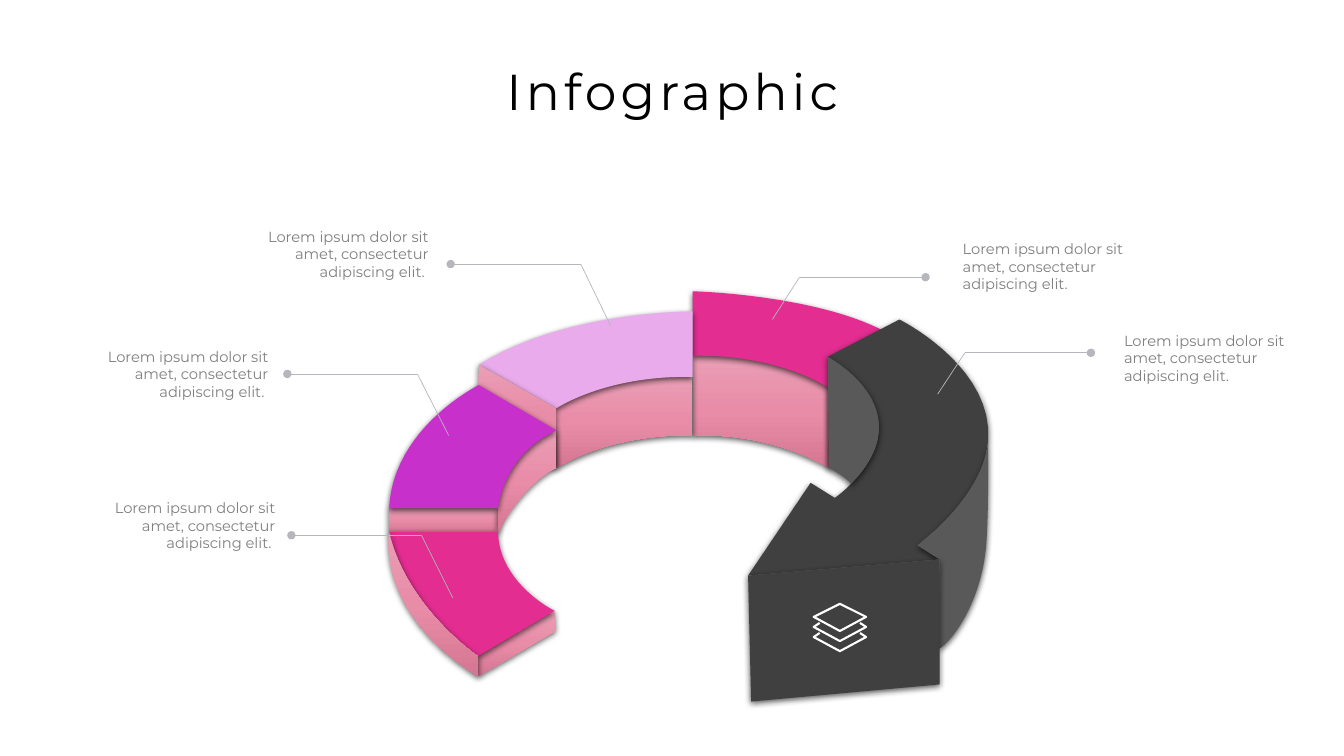
from copy import deepcopy
from dataclasses import dataclass

from pptx import Presentation
from pptx.dml.color import RGBColor
from pptx.enum.shapes import MSO_CONNECTOR, MSO_SHAPE
from pptx.enum.text import MSO_ANCHOR, PP_ALIGN
from pptx.oxml import parse_xml
from pptx.oxml.ns import nsdecls, qn
from pptx.util import Inches, Pt


@dataclass(frozen=True)
class Theme:
    """Colours and type sizes of the slide."""
    font: str = "Montserrat"
    title_size: float = 36
    note_size: float = 10.5
    title: str = "000000"
    note: str = "808080"
    leader: str = "B6B7BD"
    icon: str = "FFFFFF"
    wall: tuple = ("E99EB4", "E98CA8", "D57793")
    pink: str = "E32D91"
    lilac: str = "E9ABEB"
    violet: str = "C830CC"
    dark: str = "404040"
    grey: str = "595959"


THEME = Theme()
CURVE_STEPS = 24
NOTE = "Lorem ipsum dolor sit amet, consectetur adipiscing elit."

BACK_RIGHT = [
    (THEME.wall, [(6.87, 4.32), (6.87, 3.53), (7.65, 3.49, 8.22, 3.85),
                  (8.22, 4.64), (7.68, 4.29, 6.87, 4.32)]),
    (THEME.pink, [(6.87, 3.53), (6.87, 2.89), (8.04, 2.92, 8.74, 3.27),
                  (8.22, 3.85), (7.73, 3.51, 6.87, 3.53)]),
    (THEME.wall, [(8.75, 3.27), (8.22, 3.86), (8.22, 4.64), (8.74, 4.15)]),
]
ARROW = [
    (THEME.dark, [(8.21, 3.54), (8.92, 3.17), (10.78, 4.09, 9.1, 5.41),
                  (9.32, 5.55), (7.42, 5.71), (8.04, 4.79), (8.28, 4.94),
                  (9.31, 4.23, 8.21, 3.54)]),
    (THEME.grey, [(8.44, 4.8), (8.4, 4.74, 8.22, 4.64), (8.21, 3.54),
                  (9.18, 4.05, 8.44, 4.8)]),
    (THEME.grey, [(9.32, 5.55), (9.1, 5.41), (9.74, 4.94, 9.8, 4.39),
                  (9.81, 5.06, 9.78, 5.43),
                  (9.73, 5.95, 9.47, 6.34, 9.31, 6.44)]),
    (THEME.dark, [(7.42, 5.71), (9.32, 5.55), (9.32, 6.79), (7.45, 6.96)]),
]
BACK_LEFT = [
    (THEME.wall, [(5.52, 4.64), (5.51, 4.05), (6.01, 3.72, 6.87, 3.74),
                  (6.87, 4.32), (6.12, 4.28, 5.52, 4.64)]),
    (THEME.lilac, [(6.87, 3.74), (6.87, 3.09), (5.6, 3.08, 4.75, 3.62),
                   (5.52, 4.05), (6.01, 3.72, 6.87, 3.74)]),
    (THEME.wall, [(4.75, 3.62), (5.51, 4.05), (5.52, 4.64), (4.74, 4.2)]),
]
MIDDLE_LEFT = [
    (THEME.wall, [(4.94, 5.04), (4.97, 4.52, 5.52, 4.27), (5.52, 4.64),
                  (5.2, 4.77, 4.94, 5.28)]),
    (THEME.violet, [(5.52, 4.27), (4.75, 3.82), (3.9, 4.24, 3.86, 5.04),
                    (4.94, 5.04), (4.98, 4.52, 5.52, 4.27)]),
]
FRONT_LEFT = [
    (THEME.wall, [(4.74, 6.51), (4.74, 6.71), (5.51, 6.26), (5.5, 6.06)]),
    (THEME.pink, [(5.5, 6.06), (4.95, 5.79, 4.94, 5.28), (3.86, 5.28),
                  (3.95, 5.91, 4.74, 6.51)]),
    (THEME.wall, [(4.74, 6.71), (4.74, 6.51), (4.03, 6.03, 3.86, 5.28),
                  (3.71, 6.06, 4.74, 6.71)]),
]
STEP_EDGE = (3.86, 5.04, 1.09, 0.24)

LEFT_CALLOUTS = [
    ((4.45, 4.32), (4.14, 3.71), (2.85, 3.71), (0.92, 3.4)),
    ((4.49, 5.93), (4.18, 5.31), (2.89, 5.31), (0.99, 4.9)),
    ((6.06, 3.24), (5.76, 2.62), (4.47, 2.62), (2.51, 2.21)),
]
RIGHT_CALLOUTS = [
    ((9.3, 3.91), (9.57, 3.5), (10.82, 3.5), (11.05, 3.24)),
    ((7.66, 3.17), (7.93, 2.75), (9.18, 2.75), (9.45, 2.33)),
]


def rgb(value):
    """Turn a hex string into a colour."""
    return RGBColor.from_string(value)


def apply(target, values):
    """Set attributes from a dict of format values."""
    for key, value in values.items():
        setattr(target, key, value)


def trace(outline):
    """Turn corners and Bezier segments into points along the outline."""
    points = [outline[0]]
    for segment in outline[1:]:
        pen = points[-1]
        if len(segment) == 2:
            points.append(segment)
            continue
        first = segment[:-4] or pen
        second, end = segment[-4:-2], segment[-2:]
        for step in range(1, CURVE_STEPS + 1):
            t = step / CURVE_STEPS
            u = 1 - t
            points.append(tuple(
                u**3 * a + 3 * u * u * t * b + 3 * u * t * t * c + t**3 * d
                for a, b, c, d in zip(pen, first, second, end)))
    return points


def add_outline(slide, outline, close=True):
    """Draw a freeform through an outline given in inches."""
    start, *rest = [(Inches(x), Inches(y)) for x, y in trace(outline)]
    builder = slide.shapes.build_freeform(*start)
    builder.add_line_segments(rest, close=close)
    return builder.convert_to_shape()


def paint_face(face, paint):
    """Give a face its flat or graded fill and a soft shadow."""
    face.line.fill.background()
    face.shadow.inherit = False
    properties = face._element.spPr
    if isinstance(paint, str):
        face.fill.solid()
        face.fill.fore_color.rgb = rgb(paint)
    else:
        face.fill.gradient()
        face.fill.gradient_angle = 270
        stops = properties.find(".//" + qn("a:gsLst"))
        stops.insert(1, deepcopy(stops[0]))
        for stop, color, position in zip(face.fill.gradient_stops, paint, (0, 0.5, 1)):
            stop.color.rgb = rgb(color)
            stop.position = position
    properties.find(qn("a:effectLst")).append(parse_xml(
        f'<a:outerShdw {nsdecls("a")} blurRad="{Pt(4.5)}" dist="{Pt(1.5)}" '
        'dir="5400000" rotWithShape="0"><a:srgbClr val="000000">'
        '<a:alpha val="63000"/></a:srgbClr></a:outerShdw>'))


def add_block(slide, faces):
    """Draw the faces of one block of the ring."""
    for paint, outline in faces:
        paint_face(add_outline(slide, outline), paint)


def add_leader(slide, start, end, dotted=False):
    """Draw one thin leader line, with a dot at its end if asked."""
    leader = slide.shapes.add_connector(
        MSO_CONNECTOR.STRAIGHT, *map(Inches, start + end))
    leader.line.color.rgb = rgb(THEME.leader)
    leader.line.width = Pt(0.5)
    if dotted:
        leader.line._get_or_add_ln().append(
            parse_xml(f'<a:tailEnd {nsdecls("a")} type="oval"/>'))
    leader._element.spPr.append(parse_xml(f'<a:effectLst {nsdecls("a")}/>'))


def add_callout(slide, callout, size, text, align):
    """Draw a bent leader and the note it belongs to."""
    tip, elbow, dot, corner = callout
    add_leader(slide, tip, elbow)
    add_leader(slide, elbow, dot, dotted=True)
    note = slide.shapes.add_textbox(*map(Inches, corner + size)).text_frame
    note.word_wrap = True
    write(note, text, THEME.note_size, THEME.note, align)


def write(frame, text, size, color, align):
    """Fill a text frame with one formatted paragraph and return its run."""
    paragraph = frame.paragraphs[0]
    paragraph.alignment = align
    run = paragraph.add_run()
    run.text = text
    apply(run.font, {"name": THEME.font, "size": Pt(size), "bold": False})
    run.font.color.rgb = rgb(color)
    return run


def add_layers_icon(slide):
    """Draw a stack of three layers in white lines."""
    left, middle, right = 8.07, 8.33, 8.59
    sheet = [(left, 6.12), (middle, 5.99), (right, 6.12), (middle, 6.26)]
    edges = [[(left + 0.06, y - 0.04), (left, y), (middle, y + 0.14),
              (right, y), (right - 0.06, y - 0.04)] for y in (6.22, 6.32)]
    for outline in [sheet, *edges]:
        layer = add_outline(slide, outline, close=outline is sheet)
        layer.shadow.inherit = False
        layer.fill.background()
        layer.line.color.rgb = rgb(THEME.icon)
        layer.line.width = Pt(1.5)


def add_title(slide, text):
    """Place and format the title."""
    title = slide.shapes.title
    apply(title, {"left": Inches(4.9), "top": Inches(0.54),
                  "width": Inches(3.54), "height": Inches(0.71)})
    apply(title.text_frame, {"word_wrap": False, "vertical_anchor": MSO_ANCHOR.MIDDLE})
    run = write(title.text_frame, text, THEME.title_size, THEME.title, PP_ALIGN.CENTER)
    run.font._element.set("spc", "300")


def main():
    """Build the slide and save it."""
    deck = Presentation()
    apply(deck, {"slide_width": Inches(13.33), "slide_height": Inches(7.5)})
    slide = deck.slides.add_slide(deck.slide_layouts[5])
    add_title(slide, "Infographic")
    for faces in (BACK_RIGHT, ARROW, BACK_LEFT):
        add_block(slide, faces)
    edge = slide.shapes.add_shape(MSO_SHAPE.RECTANGLE, *map(Inches, STEP_EDGE))
    paint_face(edge, THEME.wall)
    for faces in (MIDDLE_LEFT, FRONT_LEFT):
        add_block(slide, faces)
    for callout in LEFT_CALLOUTS:
        add_callout(slide, callout, (1.84, 0.83), NOTE + " ", PP_ALIGN.RIGHT)
    for callout in RIGHT_CALLOUTS:
        add_callout(slide, callout, (2.06, 0.85), NOTE, PP_ALIGN.LEFT)
    add_layers_icon(slide)
    deck.save("out.pptx")


if __name__ == "__main__":
    main()
